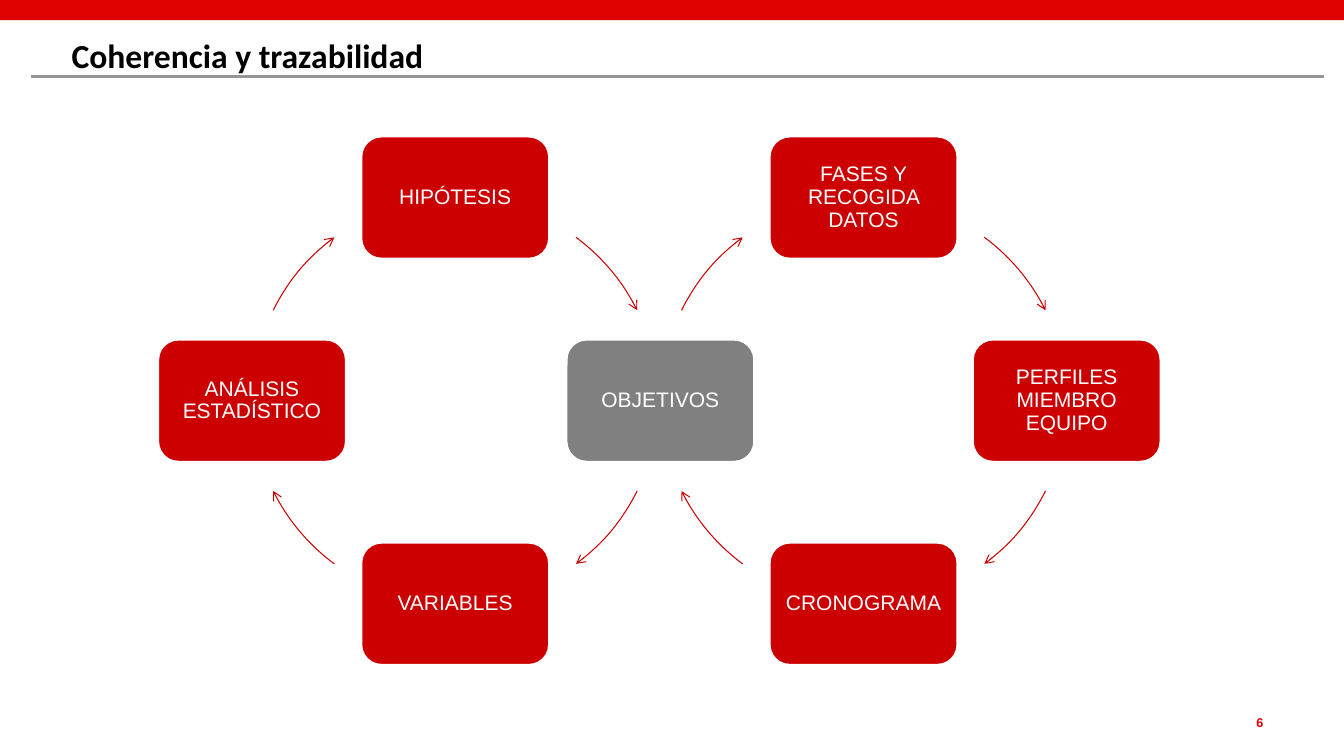
from lxml.etree import SubElement
from pptx import Presentation
from pptx.dml.color import RGBColor
from pptx.enum.shapes import MSO_CONNECTOR as Link, MSO_SHAPE as Kind
from pptx.enum.text import MSO_ANCHOR as Anchor, PP_ALIGN as Align
from pptx.oxml.ns import qn
from pptx.util import Inches, Pt

WIDTH, HEIGHT = 13.33, 7.5
BAND = RGBColor(0xDF, 0x00, 0x00)
RED = RGBColor(0xCC, 0x00, 0x00)
GRAY = RGBColor(0x80, 0x80, 0x80)
RULE = RGBColor(0x96, 0x96, 0x96)
BLACK = RGBColor(0x01, 0x00, 0x00)
WHITE = RGBColor(0xFF, 0xFF, 0xFF)

RING = 4.03
CARD_W, CARD_H = 1.87, 1.22
SWEEP = 27.1
SPOTS = {"top": (0.5, 0), "right": (1, 0.5), "bottom": (0.5, 1), "left": (0, 0.5)}
STARTS = (306.5, 26.4, 126.5, 206.4)


def write(shape, text, font, size, color, align, inset, bold=False):
    frame = shape.text_frame
    frame.word_wrap = True
    frame.margin_left = frame.margin_right = Inches(inset)
    frame.margin_top = frame.margin_bottom = Inches(inset)
    frame.text = text
    para = frame.paragraphs[0]
    para.alignment = align
    for run in para.runs:
        run.font.name = font
        run.font.size = Pt(size)
        run.font.bold = bold
        run.font.color.rgb = color
    return frame


def add_block(shapes, kind, box, fill):
    shape = shapes.add_shape(kind, *map(Inches, box))
    shape.shadow.inherit = False
    shape.fill.solid()
    shape.fill.fore_color.rgb = fill
    shape.line.fill.background()
    return shape


def add_head(shapes, title):
    add_block(shapes, Kind.RECTANGLE, (0, 0, WIDTH, 0.2), BAND)
    rule = shapes.add_connector(Link.STRAIGHT, *map(Inches, (0.31, 0.76, 13.13, 0.76)))
    rule.line.color.rgb = RULE
    rule.line.width = Pt(2.25)
    SubElement(rule._element.spPr, qn("a:effectLst"))
    box = shapes.add_textbox(*map(Inches, (0.66, 0.3, 12.22, 0.47)))
    write(box, title, "Calibri", 24, BLACK, Align.LEFT, 0.05, True)


def add_foot(shapes, number):
    box = shapes.add_textbox(*map(Inches, (11.27, 7.09, 1.26, 0.15)))
    write(box, number, "Arial", 9, BAND, Align.RIGHT, 0, True)


def add_card(shapes, x, y, text, fill):
    box = (x - CARD_W / 2, y - CARD_H / 2, CARD_W, CARD_H)
    card = add_block(shapes, Kind.ROUNDED_RECTANGLE, box, fill)
    card.line.color.rgb = WHITE
    card.line.width = Pt(2)
    if text:
        frame = write(card, text, "Arial", 15, WHITE, Align.CENTER, 0.06)
        frame.vertical_anchor = Anchor.MIDDLE
        frame.paragraphs[0].line_spacing = 0.9


def add_arc(shapes, left, top, start):
    arc = shapes.add_shape(Kind.ARC, *map(Inches, (left, top, RING, RING)))
    arc.shadow.inherit = False
    arc.fill.background()
    arc.adjustments[0] = start * 0.6
    arc.adjustments[1] = (start + SWEEP) * 0.6
    arc.line.color.rgb = RED
    arc.line.width = Pt(0.75)
    SubElement(arc.line._get_or_add_ln(), qn("a:tailEnd"), type="arrow")


def add_cycle(shapes, left, top, cards, hub):
    group = shapes.add_group_shape().shapes
    for spot, text in cards.items():
        across, down = SPOTS[spot]
        fill = GRAY if spot == hub else RED
        add_card(group, left + across * RING, top + down * RING, text, fill)
    for start in STARTS:
        add_arc(group, left, top, start)


def main():
    deck = Presentation()
    deck.slide_width, deck.slide_height = Inches(WIDTH), Inches(HEIGHT)
    shapes = deck.slides.add_slide(deck.slide_layouts[6]).shapes
    add_foot(shapes, "6")
    add_head(shapes, "Coherencia y trazabilidad")
    add_cycle(shapes, 2.5, 1.96, {
        "top": "HIPÓTESIS",
        "right": "",
        "bottom": "VARIABLES",
        "left": "ANÁLISIS ESTADÍSTICO",
    }, "right")
    add_cycle(shapes, 6.55, 1.96, {
        "top": "FASES Y RECOGIDA DATOS",
        "right": "PERFILES MIEMBRO EQUIPO",
        "bottom": "CRONOGRAMA",
        "left": "OBJETIVOS",
    }, "left")
    deck.save("out.pptx")


if __name__ == "__main__":
    main()
